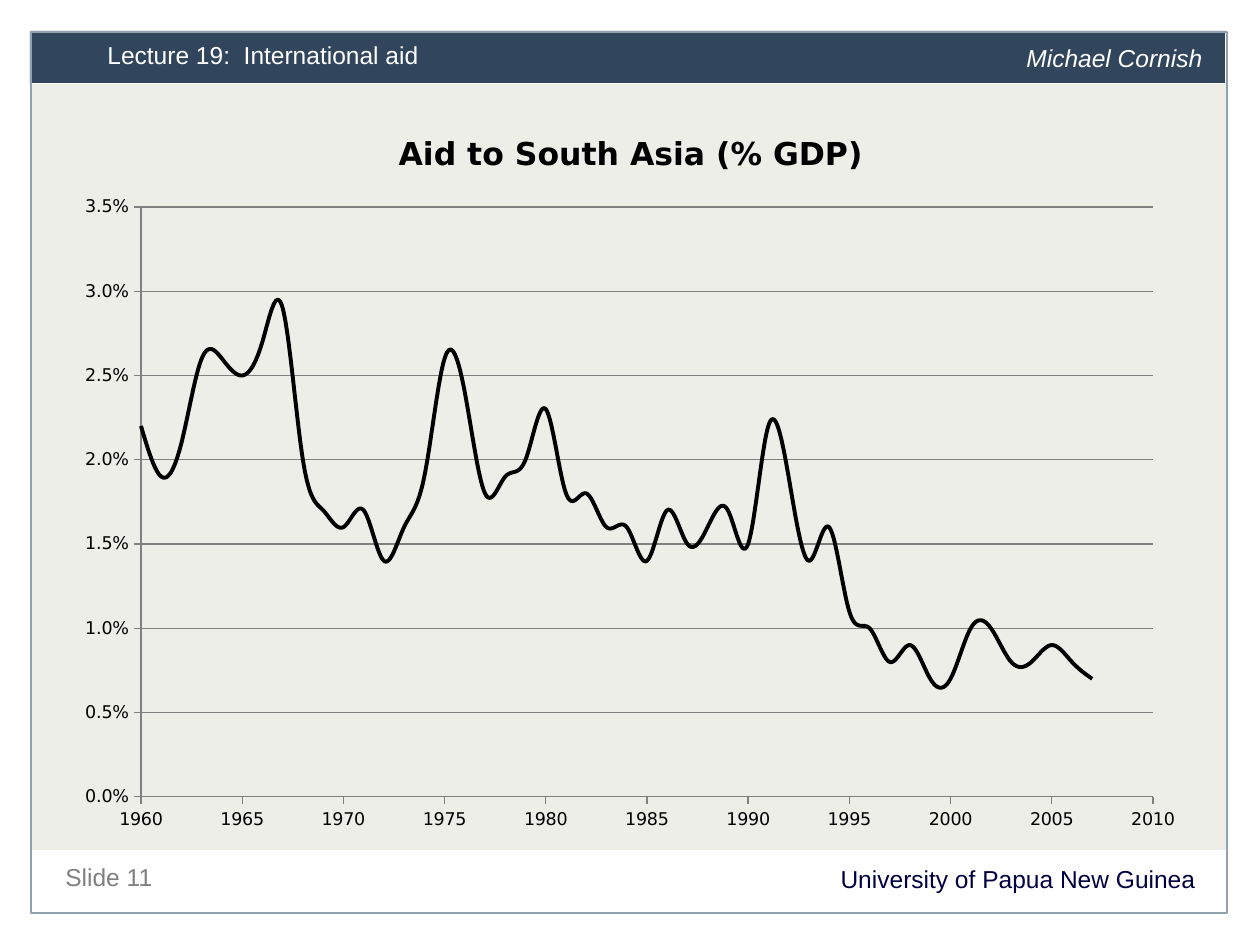
from dataclasses import dataclass

from lxml.etree import SubElement
from pptx import Presentation
from pptx.chart.data import XyChartData
from pptx.dml.color import RGBColor
from pptx.enum.chart import XL_CHART_TYPE as ChartType, XL_TICK_MARK as TickMark
from pptx.enum.shapes import MSO_SHAPE as Shape
from pptx.enum.text import PP_ALIGN as Align
from pptx.oxml.ns import qn
from pptx.util import Pt

EMU_PER_PX = 914400 / 126
SLIDE_WIDTH, SLIDE_HEIGHT = 1260, 945


@dataclass(frozen=True)
class Theme:
    panel: str = "EDEEE8"
    header: str = "31465C"
    white: str = "FFFFFF"
    frame: str = "91A1B0"
    university: str = "000041"
    grey: str = "808080"
    black: str = "000000"
    font: str = "Arial"
    chart_font: str = "DejaVu Sans"
    text_size: int = 14
    title_size: int = 18
    label_size: int = 10


THEME = Theme()

FIRST_YEAR = 1960
AID_SHARES = [
    0.022, 0.019, 0.021, 0.026, 0.026, 0.025, 0.027, 0.029, 0.020, 0.017,
    0.016, 0.017, 0.014, 0.016, 0.019, 0.026, 0.024, 0.018, 0.019, 0.020,
    0.023, 0.018, 0.018, 0.016, 0.016, 0.014, 0.017, 0.015, 0.016, 0.017,
    0.015, 0.022, 0.019, 0.014, 0.016, 0.011, 0.010, 0.008, 0.009, 0.007,
    0.007, 0.010, 0.010, 0.008, 0.008, 0.009, 0.008, 0.007,
]


def px(length):
    return round(length * EMU_PER_PX)


def color(value):
    return RGBColor.from_string(value)


def set_line(line, value, width):
    line.color.rgb = color(value)
    line.width = Pt(width)


def add_box(slide, box, fill=None, line=None, line_width=0.75):
    shape = slide.shapes.add_shape(Shape.RECTANGLE, *map(px, box))
    shape.shadow.inherit = False
    if fill:
        shape.fill.solid()
        shape.fill.fore_color.rgb = color(fill)
    else:
        shape.fill.background()
    if line:
        set_line(shape.line, line, line_width)
    else:
        shape.line.fill.background()


def add_text(slide, box, text, text_color, spacing, align=Align.LEFT, italic=False):
    text_frame = slide.shapes.add_textbox(*map(px, box)).text_frame
    text_frame.word_wrap = True
    text_frame.text = text
    paragraph = text_frame.paragraphs[0]
    paragraph.alignment = align
    paragraph.line_spacing = Pt(spacing)
    font = paragraph.runs[0].font
    font.name, font.size, font.italic = THEME.font, Pt(THEME.text_size), italic
    font.color.rgb = color(text_color)


def add_header(slide, box):
    left, top, width, _ = box
    add_box(slide, box, THEME.header, THEME.white, 0.5)
    add_text(slide, (left + 65, top + 1, 772, 47), "Lecture 19:  International aid",
             THEME.white, 18)
    add_text(slide, (left + width - 212, top + 4, 207, 47), "Michael Cornish",
             THEME.white, 18, italic=True)


def add_footer(slide, box):
    left, top, width, _ = box
    add_text(slide, (left + 23, top + 11, width - 42, 40),
             "University of Papua New Guinea", THEME.university, 15, Align.RIGHT)
    add_text(slide, (left + 23, top, 546, 43), "Slide 11", THEME.grey, 20)


def set_layout(parent, **settings):
    """Fix the place of a chart part, as fractions of the chart."""
    layout = parent.find(qn("c:layout"))
    if layout is None:
        layout = SubElement(parent, qn("c:layout"))
        parent.remove(layout)
        text = parent.find(qn("c:tx"))
        parent.insert(0 if text is None else parent.index(text) + 1, layout)
    manual = SubElement(layout, qn("c:manualLayout"))
    for name, value in settings.items():
        SubElement(manual, qn(f"c:{name}")).set("val", str(value))


def format_axis(axis, minimum, maximum, unit, number_format):
    axis.minimum_scale, axis.maximum_scale, axis.major_unit = minimum, maximum, unit
    axis.major_tick_mark, axis.minor_tick_mark = TickMark.OUTSIDE, TickMark.NONE
    axis.tick_labels.number_format = number_format
    axis.tick_labels.number_format_is_linked = False
    set_line(axis.format.line, THEME.grey, 0.75)


def add_aid_chart(slide, box):
    _, _, width, height = box
    data = XyChartData()
    points = data.add_series("Series 1")
    for year, share in enumerate(AID_SHARES, FIRST_YEAR):
        points.add_data_point(year, share)
    chart = slide.shapes.add_chart(
        ChartType.XY_SCATTER_SMOOTH_NO_MARKERS, *map(px, box), data).chart
    chart.has_legend = False
    chart.font.name, chart.font.size = THEME.chart_font, Pt(THEME.label_size)
    chart.font.color.rgb = color(THEME.black)
    chart.plots[0].vary_by_categories = False

    # Title
    chart.has_title = True
    title = chart.chart_title
    title.include_in_layout = False
    title.text_frame.text = "Aid to South Asia (% GDP)"
    font = title.text_frame.paragraphs[0].runs[0].font
    font.name, font.size, font.bold = THEME.chart_font, Pt(THEME.title_size), True
    font.color.rgb = color(THEME.black)
    set_layout(title._element, xMode="edge", yMode="edge",
               x=330 / width, y=21 / height)

    # Axes and grid
    format_axis(chart.category_axis, FIRST_YEAR, 2010, 5, "0")
    format_axis(chart.value_axis, 0, 0.035, 0.005, "0.0%")
    chart.category_axis.has_major_gridlines = False
    chart.value_axis.has_major_gridlines = True
    set_line(chart.value_axis.major_gridlines.format.line, THEME.grey, 0.75)

    # Smooth curve: scatter series have no public smooth setting
    series = chart.plots[0].series[0]
    set_line(series.format.line, THEME.black, 2.25)
    smooth = series._element.find(qn("c:smooth"))
    if smooth is None:
        smooth = SubElement(series._element, qn("c:smooth"))
    smooth.set("val", "1")

    # Plot area
    plot_area = chart._chartSpace.chart.plotArea
    set_layout(plot_area, layoutTarget="inner", xMode="edge", yMode="edge",
               x=78 / width, y=101 / height, w=1012 / width, h=590 / height)


def build_slide(presentation):
    slide = presentation.slides.add_slide(presentation.slide_layouts[6])
    add_box(slide, (31, 84, 1197, 766), THEME.panel)
    add_header(slide, (30, 31, 1196, 53))
    add_footer(slide, (30, 850, 1197, 63))
    add_box(slide, (31, 32, 1196, 881), line=THEME.frame)
    add_aid_chart(slide, (63, 106, 1134, 738))


def main():
    presentation = Presentation()
    presentation.slide_width = px(SLIDE_WIDTH)
    presentation.slide_height = px(SLIDE_HEIGHT)
    build_slide(presentation)
    presentation.save("out.pptx")


if __name__ == "__main__":
    main()
